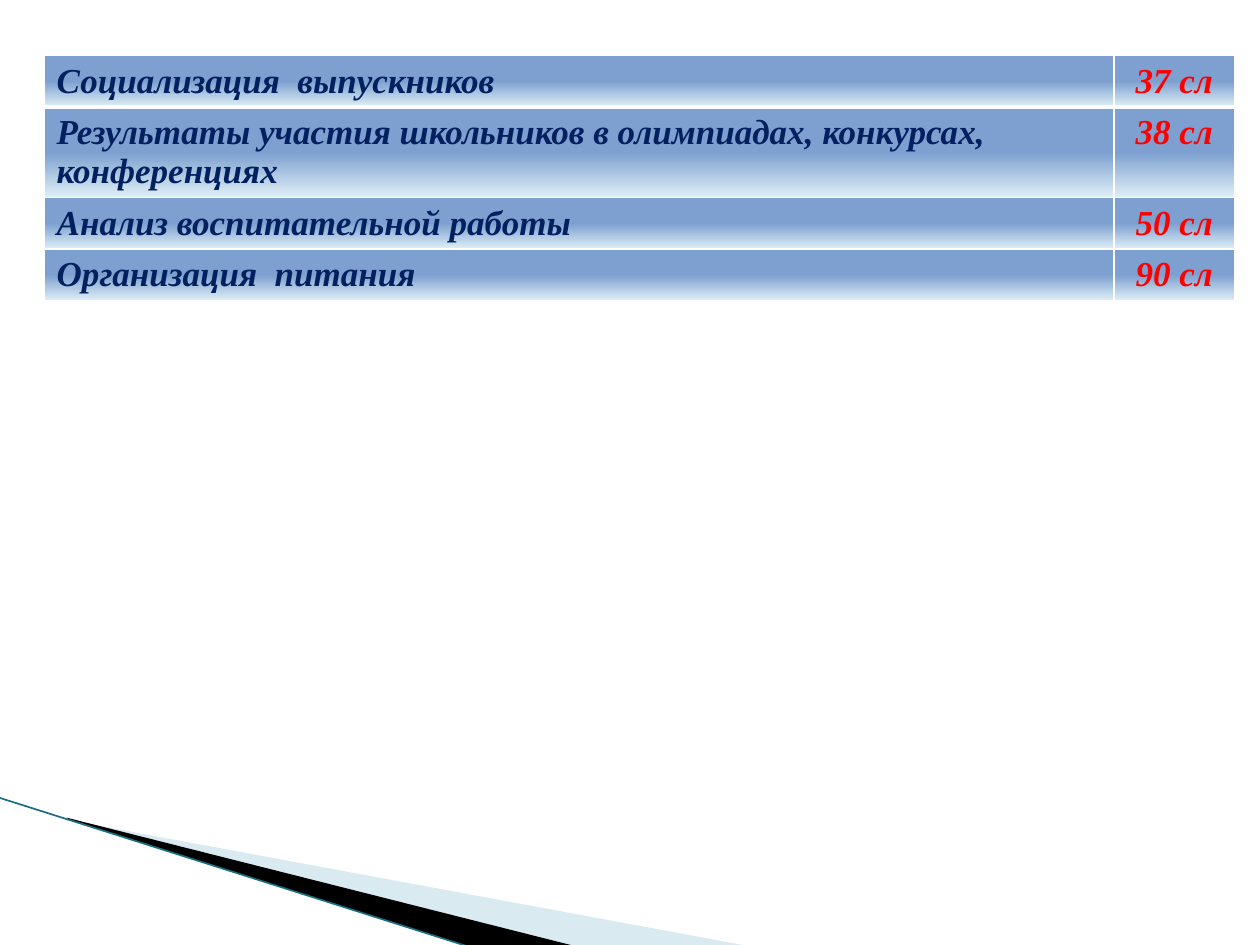
from copy import deepcopy

from lxml.etree import SubElement
from pptx import Presentation
from pptx.dml.color import RGBColor
from pptx.enum.shapes import MSO_CONNECTOR
from pptx.enum.text import PP_ALIGN
from pptx.oxml import parse_xml
from pptx.oxml.ns import nsdecls, qn
from pptx.util import Inches, Pt

NAVY = RGBColor(0x00, 0x20, 0x60)
RED = RGBColor(0xFF, 0x00, 0x00)
BLACK = RGBColor(0x00, 0x00, 0x00)
WHITE = RGBColor(0xFF, 0xFF, 0xFF)
TEAL = RGBColor(0x1B, 0x6E, 0x80)
PALE_BLUE = RGBColor(0xA0, 0xCB, 0xDC)
CELL_BLUE = RGBColor(0x7D, 0xA0, 0xD0)
CELL_LIGHT = RGBColor(0xDF, 0xEF, 0xF6)

CONTENTS = [
    ("Социализация  выпускников", "37 сл"),
    ("Результаты участия школьников в олимпиадах, конкурсах, конференциях", "38 сл"),
    ("Анализ воспитательной работы", "50 сл"),
    ("Организация  питания", "90 сл"),
]
COLUMN_WIDTHS = [8.49, 0.96]
ROW_HEIGHTS = [0.41, 0.7, 0.41, 0.41]
COLUMN_STYLES = [(NAVY, PP_ALIGN.LEFT), (RED, PP_ALIGN.CENTER)]


class SlideBuilder:
    FONT = {"name": "Times New Roman", "size": Pt(20), "bold": True, "italic": True}

    def __init__(self, slide):
        self.slide = slide

    def wedge(self, frame, points, color, alpha=None):
        """Draw a filled outline that may reach beyond its frame; alpha is opacity in percent."""
        start, *rest = [(Inches(x), Inches(y)) for x, y in points]
        outline = self.slide.shapes.build_freeform(*start)
        outline.add_line_segments(rest, close=True)
        shape = outline.convert_to_shape()
        self.reframe(shape, *[Inches(value) for value in frame])
        shape.shadow.inherit = False
        shape.fill.solid()
        shape.fill.fore_color.rgb = color
        shape.line.fill.background()
        if alpha is not None:
            rgb = shape._element.spPr.find(qn("a:solidFill"))[0]
            SubElement(rgb, qn("a:alpha")).set("val", str(alpha * 1000))

    def reframe(self, shape, left, top, width, height):
        """Change the frame of a freeform and leave its outline in place."""
        shift_x, shift_y = shape.left - left, shape.top - top
        for outline in shape._element.spPr.iter(qn("a:path")):
            outline.set("w", str(width))
            outline.set("h", str(height))
            for point in outline.iter(qn("a:pt")):
                point.set("x", str(int(point.get("x")) + shift_x))
                point.set("y", str(int(point.get("y")) + shift_y))
        shape.left, shape.top, shape.width, shape.height = left, top, width, height

    def line(self, start, end, color, width):
        ends = [Inches(value) for value in (*start, *end)]
        connector = self.slide.shapes.add_connector(MSO_CONNECTOR.STRAIGHT, *ends)
        connector.line.color.rgb = color
        connector.line.width = Pt(width)
        SubElement(connector._element.spPr, qn("a:effectLst"))

    def table(self, left, top, rows):
        table = self.slide.shapes.add_table(
            len(rows), len(COLUMN_WIDTHS), Inches(left), Inches(top),
            Inches(sum(COLUMN_WIDTHS)), Inches(sum(ROW_HEIGHTS))).table
        table.first_row = table.horz_banding = False
        for column, width in zip(table.columns, COLUMN_WIDTHS):
            column.width = Inches(width)
        for row, height in zip(table.rows, ROW_HEIGHTS):
            row.height = Inches(height)
        for r, texts in enumerate(rows):
            for c, text in enumerate(texts):
                cell = table.cell(r, c)
                self.cell_text(cell, text, *COLUMN_STYLES[c])
                self.cell_gradient(cell)
                self.cell_borders(cell, top=3 if r == 1 else 1, bottom=3 if r == 0 else 1)

    def cell_text(self, cell, text, color, alignment):
        paragraph = cell.text_frame.paragraphs[0]
        paragraph.alignment = alignment
        run = paragraph.add_run()
        run.text = text
        for name, value in self.FONT.items():
            setattr(run.font, name, value)
        run.font.color.rgb = color

    def cell_gradient(self, cell):
        """Keep the upper half plain and fade the lower half downwards."""
        cell.fill.gradient()
        cell.fill.gradient_angle = 270
        stop_list = cell._tc.tcPr.find(qn("a:gradFill")).find(qn("a:gsLst"))
        stop_list.insert(1, deepcopy(stop_list[0]))
        stops = [(0, CELL_BLUE), (0.5, CELL_BLUE), (1, CELL_LIGHT)]
        for stop, (position, color) in zip(cell.fill.gradient_stops, stops):
            stop.position = position
            stop.color.rgb = color

    def cell_borders(self, cell, top, bottom):
        widths = {"lnL": 1, "lnR": 1, "lnT": top, "lnB": bottom}
        for index, (side, width) in enumerate(widths.items()):
            cell._tc.tcPr.insert(index, parse_xml(
                f'<a:{side} {nsdecls("a")} w="{Pt(width)}"><a:solidFill>'
                f'<a:srgbClr val="{WHITE}"/></a:solidFill></a:{side}>'))


def main():
    presentation = Presentation()
    presentation.slide_width = Inches(10)
    presentation.slide_height = Inches(7.5)
    builder = SlideBuilder(presentation.slides.add_slide(presentation.slide_layouts[6]))
    builder.wedge((0.78, 5.47, 4.16, 1.58),
                  [(0.55, 6.51), (5.95, 7.51), (4.56, 7.51), (0.55, 6.5)], PALE_BLUE, alpha=40)
    builder.wedge((-0.06, 6.33, 4.16, 0.92),
                  [(0.53, 6.49), (4.57, 7.51), (3.74, 7.52), (0.54, 6.5)], BLACK)
    builder.line((-0.01, 6.33), (3.74, 7.52), TEAL, 0.95)
    builder.table(0.35, 0.44, CONTENTS)
    presentation.save("out.pptx")


if __name__ == "__main__":
    main()
